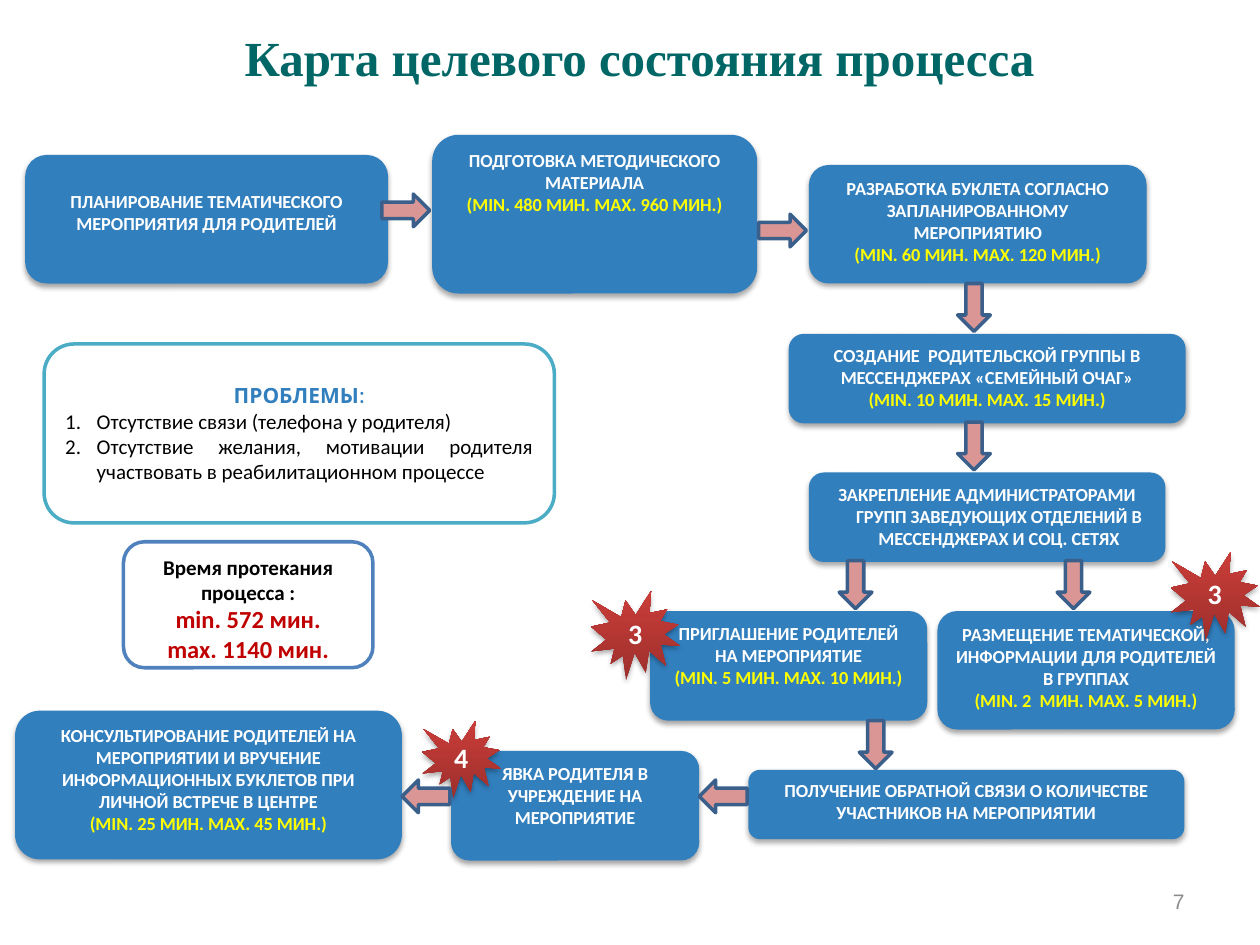
from lxml import etree
from pptx import Presentation
from pptx.dml.color import RGBColor
from pptx.enum.shapes import MSO_SHAPE
from pptx.enum.text import MSO_ANCHOR, PP_ALIGN
from pptx.oxml.ns import qn
from pptx.util import Inches, Pt

ROUNDED, ARROW, SEAL = (MSO_SHAPE.ROUNDED_RECTANGLE, MSO_SHAPE.RIGHT_ARROW,
                        MSO_SHAPE.EXPLOSION1)
TOP, MIDDLE = MSO_ANCHOR.TOP, MSO_ANCHOR.MIDDLE
CENTER, JUSTIFY, RIGHT = PP_ALIGN.CENTER, PP_ALIGN.JUSTIFY, PP_ALIGN.RIGHT

THEME = {
    "fill": {"step": "327FBE", "panel": "FFFFFF", "arrow": "D99694"},
    "line": {"time": "4F81BD", "problems": "4BACC6", "arrow": "3A5F8B"},
    "seal": ("9C2F2C", "CB3D39"),
    "black": "000000",
    "text": {
        "title": ("Times New Roman", 28, True, "006666"),
        "step": ("Calibri", 10.5, True, "FFFFFF"),
        "range": ("Calibri", 10.5, True, "FFFF00"),
        "heading": ("Quicksand", 12, True, "327FBE"),
        "problem": ("Calibri", 12, False, "000000"),
        "label": ("Calibri", 12, True, "000000"),
        "total": ("Calibri", 14, True, "C00000"),
        "seal": ("Calibri", 16, True, "FFFFFF"),
        "number": ("Arial", 12, False, "8B8B8B"),
    },
}

TITLE = "Карта целевого состояния процесса"
PAGE_NUMBER = "7"

# (left, top, width, height), step, time range
STEPS = [
    ((0.2, 1.23, 2.88, 1.02), "ПЛАНИРОВАНИЕ ТЕМАТИЧЕСКОГО МЕРОПРИЯТИЯ ДЛЯ РОДИТЕЛЕЙ", ""),
    ((3.43, 1.07, 2.58, 1.26), "ПОДГОТОВКА МЕТОДИЧЕСКОГО МАТЕРИАЛА",
     "(MIN. 480 МИН. MAX. 960 МИН.)"),
    ((6.42, 1.31, 2.68, 0.94), "РАЗРАБОТКА БУКЛЕТА СОГЛАСНО ЗАПЛАНИРОВАННОМУ МЕРОПРИЯТИЮ",
     "(MIN. 60 МИН. MAX. 120 МИН.)"),
    ((6.26, 2.65, 3.15, 0.71),
     "СОЗДАНИЕ  РОДИТЕЛЬСКОЙ ГРУППЫ В МЕССЕНДЖЕРАХ «СЕМЕЙНЫЙ ОЧАГ»",
     "(MIN. 10 МИН. MAX. 15 МИН.)"),
    ((6.42, 3.75, 2.83, 0.71),
     "ЗАКРЕПЛЕНИЕ АДМИНИСТРАТОРАМИ ГРУПП ЗАВЕДУЮЩИХ ОТДЕЛЕНИЙ В МЕССЕНДЖЕРАХ И СОЦ. СЕТЯХ", ""),
    ((7.44, 4.85, 2.36, 0.94), "РАЗМЕЩЕНИЕ ТЕМАТИЧЕСКОЙ, ИНФОРМАЦИИ ДЛЯ РОДИТЕЛЕЙ В ГРУППАХ",
     "(MIN. 2  МИН. MAX. 5 МИН.)"),
    ((5.16, 4.85, 2.2, 0.87), "ПРИГЛАШЕНИЕ РОДИТЕЛЕЙ НА МЕРОПРИЯТИЕ",
     "(MIN. 5 МИН. MAX. 10 МИН.)"),
    ((5.94, 6.11, 3.46, 0.55),
     "ПОЛУЧЕНИЕ ОБРАТНОЙ СВЯЗИ О КОЛИЧЕСТВЕ УЧАСТНИКОВ НА МЕРОПРИЯТИИ", ""),
    ((3.58, 5.96, 1.97, 0.87), "ЯВКА РОДИТЕЛЯ В УЧРЕЖДЕНИЕ НА МЕРОПРИЯТИЕ", ""),
    ((0.12, 5.64, 3.07, 1.18),
     "КОНСУЛЬТИРОВАНИЕ РОДИТЕЛЕЙ НА МЕРОПРИЯТИИ И ВРУЧЕНИЕ ИНФОРМАЦИОННЫХ "
     "БУКЛЕТОВ ПРИ ЛИЧНОЙ ВСТРЕЧЕ В ЦЕНТРЕ", "(MIN. 25 МИН. MAX. 45 МИН.)"),
]
PLANNING, ADMINISTRATORS = 0, 4

PROBLEMS = [
    ("ПРОБЛЕМЫ:", "heading"),
    ("Отсутствие связи (телефона у родителя)", "problem"),
    ("Отсутствие желания, мотивации родителя участвовать в реабилитационном процессе",
     "problem"),
]
DURATION = [
    ("Время протекания процесса :", "label"),
    ("min. 572 мин.", "total"),
    ("max. 1140 мин.", "total"),
]
SEALS = [("3", (9.29, 4.38, 0.71, 0.71)), ("4", (3.35, 5.72, 0.63, 0.62)),
         ("3", (4.69, 4.69, 0.71, 0.71))]

# Rotation: left and top of each arrow before it is turned
ARROWS = {
    0: [(3.03, 1.54), (6.02, 1.7)],
    90: [(7.54, 2.31), (7.54, 3.41), (6.6, 4.51), (8.33, 4.51), (6.76, 5.78)],
    180: [(5.55, 6.19), (3.19, 6.19)],
}
ARROW_SIZE = (0.38, 0.26)


def color(code):
    return RGBColor.from_string(code)


def place(place_at):
    return [Inches(value) for value in place_at]


def add_text(box, lines, align=CENTER, anchor=TOP, top_inset=0.05):
    """Write (text, style) lines, one paragraph each."""
    frame = box.text_frame
    layout = {"word_wrap": True, "vertical_anchor": anchor,
              "margin_left": Inches(0.1), "margin_right": Inches(0.1),
              "margin_top": Inches(top_inset), "margin_bottom": Inches(0.05)}
    for name, value in layout.items():
        setattr(frame, name, value)
    for index, (text, style) in enumerate(lines):
        para = frame.add_paragraph() if index else frame.paragraphs[0]
        para.alignment = align
        span = para.add_run()
        span.text = text
        family, size, bold, code = THEME["text"][style]
        for name, value in {"name": family, "size": Pt(size), "bold": bold}.items():
            setattr(span.font, name, value)
        span.font.color.rgb = color(code)


def hang(para, distance):
    """Indent every line of a paragraph but its first."""
    properties = para._p.get_or_add_pPr()
    properties.set("marL", str(Inches(distance)))
    properties.set("indent", str(-Inches(distance)))
    return properties


def number(para):
    para.alignment = JUSTIFY
    properties = hang(para, 0.25)
    bullet_color = etree.SubElement(properties, qn("a:buClr"))
    etree.SubElement(bullet_color, qn("a:srgbClr"), val=THEME["black"])
    etree.SubElement(properties, qn("a:buAutoNum"), type="arabicPeriod")


def add_figure(page, kind, place_at, fill=None, line=None):
    box = page.shapes.add_shape(kind, *place(place_at))
    box.shadow.inherit = False
    if fill:
        box.fill.solid()
        box.fill.fore_color.rgb = color(fill)
    if line:
        box.line.color.rgb = color(line)
        box.line.width = Pt(2)
    else:
        box.line.fill.background()
    return box


def cast_shadow(box):
    effects = box._element.spPr.find(qn("a:effectLst"))
    shadow = etree.SubElement(effects, qn("a:outerShdw"), blurRad=str(Pt(3.1)),
                              dist=str(Pt(1.8)), dir="5400000", rotWithShape="0")
    shade = etree.SubElement(shadow, qn("a:srgbClr"), val=THEME["black"])
    etree.SubElement(shade, qn("a:alpha"), val="35000")


def add_seal(page, text, place_at):
    box = add_figure(page, SEAL, place_at)
    box.fill.gradient()
    box.fill.gradient_angle = 90
    for position, (stop, code) in enumerate(zip(box.fill.gradient_stops, THEME["seal"])):
        stop.position = position
        stop.color.rgb = color(code)
    cast_shadow(box)
    add_text(box, [(text, "seal")], anchor=MIDDLE)


def main():
    deck = Presentation()
    deck.slide_width, deck.slide_height = Inches(10), Inches(7.5)
    page = deck.slides.add_slide(deck.slide_layouts[6])
    fills, lines = THEME["fill"], THEME["line"]

    title = page.shapes.add_textbox(*place((1.61, 0.17, 6.93, 0.56)))
    add_text(title, [(TITLE, "title")])

    for index, (place_at, step, time_range) in enumerate(STEPS):
        box = add_figure(page, ROUNDED, place_at, fills["step"])
        cast_shadow(box)
        texts = [(step, "step")] + ([(time_range, "range")] if time_range else [])
        add_text(box, texts, top_inset=0.23 if index == PLANNING else 0.05)
        if index == ADMINISTRATORS:
            hang(box.text_frame.paragraphs[0], 0.19)

    duration = add_figure(page, ROUNDED, (0.98, 4.3, 1.98, 1), fills["panel"], lines["time"])
    add_text(duration, DURATION)
    problems = add_figure(page, ROUNDED, (0.35, 2.73, 4.05, 1.42), fills["panel"],
                          lines["problems"])
    add_text(problems, PROBLEMS, anchor=MIDDLE)
    for para in problems.text_frame.paragraphs[1:]:
        number(para)

    for text, place_at in SEALS:
        add_seal(page, text, place_at)
    for rotation, corners in ARROWS.items():
        for corner in corners:
            arrow = add_figure(page, ARROW, corner + ARROW_SIZE, fills["arrow"], lines["arrow"])
            arrow.rotation = rotation

    page_number = page.shapes.add_textbox(*place((7.17, 6.95, 2.33, 0.4)))
    add_text(page_number, [(PAGE_NUMBER, "number")], align=RIGHT, anchor=MIDDLE)
    deck.save("out.pptx")


if __name__ == "__main__":
    main()
